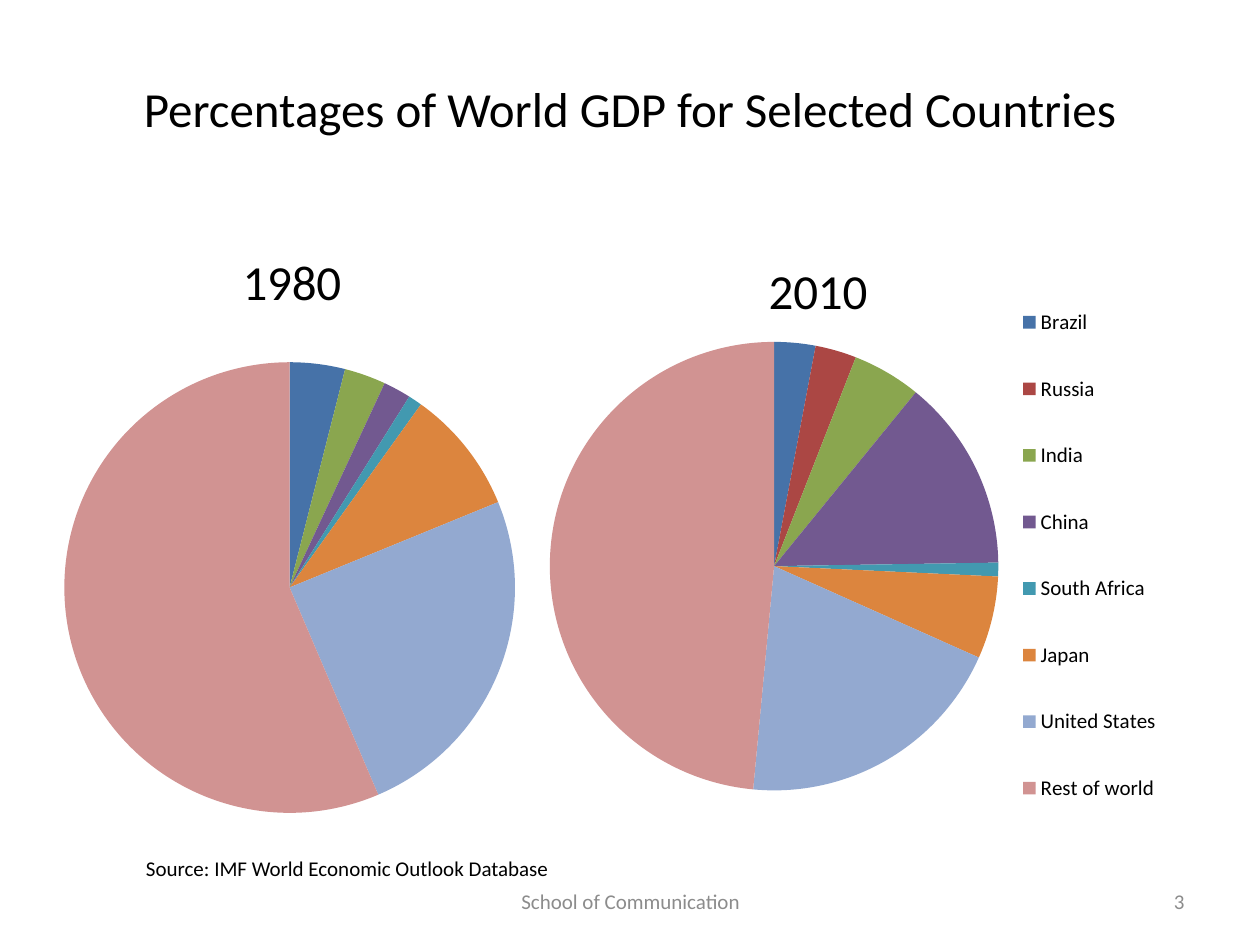
from lxml import etree
from pptx import Presentation
from pptx.chart.data import CategoryChartData as ChartData
from pptx.dml.color import RGBColor as RGB
from pptx.enum.chart import XL_CHART_TYPE as Kind, XL_LEGEND_POSITION as Side
from pptx.enum.text import MSO_ANCHOR as Anchor, PP_ALIGN as Align
from pptx.oxml.ns import qn
from pptx.util import Inches, Pt

# Content
TITLE = "Percentages of World GDP for Selected Countries"
LANDS = ["Brazil", "Russia", "India", "China", "South Africa",
         "Japan", "United States", "Rest of world"]
HUES = ["4672A8", "AB4744", "8AA64F", "725990",
        "4299B0", "DC853E", "93A9D0", "D19392"]
# Areas inside a chart are fractions of its box: left, top, width, height
PIES = [
    dict(name="1980", cats=list("12345678"), vals=[4, 0, 3, 2, 1, 9, 25, 57],
         box=(0.35, 1.7, 3.86, 5.11), head=(0.39, 0.04),
         plot=(0.04, 0.23, 0.93, 0.7), key=None),
    dict(name="2010", cats=LANDS, vals=[3, 3, 5, 14, 1, 6, 20, 49],
         box=(4.21, 1.77, 5.13, 5.12), head=(0.355, 0.04),
         plot=(0.03, 0.184, 0.694, 0.696), key=(0.75, 0.07, 0.23, 0.89)),
]
NOTES = [
    ("Source: IMF World Economic Outlook Database",
     (1.06, 6.74, 3.62, 0.3), Align.LEFT, Anchor.TOP, "000000"),
    ("School of Communication",
     (3.42, 6.95, 3.17, 0.4), Align.CENTER, Anchor.MIDDLE, "8C8C8C"),
    ("3", (7.17, 6.95, 2.33, 0.4), Align.RIGHT, Anchor.MIDDLE, "8C8C8C"),
]


def style(font, size, hue="000000"):
    font.name, font.size, font.bold = "Calibri", Pt(size), False
    font.color.rgb = RGB.from_string(hue)


def inch(box):
    return [Inches(n) for n in box]


def place(part, spot, area, inner=False):
    """Set a manual layout on a chart part, at child index spot."""
    for old in part.findall(qn("c:layout")):
        part.remove(old)
    layout = etree.Element(qn("c:layout"))
    manual = etree.SubElement(layout, qn("c:manualLayout"))
    rules = [("layoutTarget", "inner")] if inner else []
    rules += [("xMode", "edge"), ("yMode", "edge")]
    rules += zip("xywh", area)
    for tag, val in rules:
        etree.SubElement(manual, qn("c:" + tag)).set("val", str(val))
    part.insert(spot, layout)


def add_pie(slide, name, cats, vals, box, head, plot, key):
    data = ChartData()
    data.categories = cats
    data.add_series(name, vals)
    chart = slide.shapes.add_chart(Kind.PIE, *inch(box), data).chart
    style(chart.font, 18)

    # Heading
    chart.has_title = True
    chart.chart_title.include_in_layout = False
    para = chart.chart_title.text_frame.paragraphs[0]
    para.text = name
    style(para.font, 28)
    place(chart.chart_title._element, 1, head)

    # Slices
    pie = chart.plots[0]
    pie.vary_by_categories = True
    for i, hue in enumerate(HUES):
        fmt = pie.series[0].points[i].format
        fmt.fill.solid()
        fmt.fill.fore_color.rgb = RGB.from_string(hue)
        fmt.line.fill.background()
    place(chart._chartSpace.find(".//" + qn("c:plotArea")), 0, plot, True)

    # Legend
    chart.has_legend = key is not None
    if key:
        chart.legend.position = Side.RIGHT
        chart.legend.include_in_layout = False
        style(chart.legend.font, 12)
        place(chart.legend._element, 1, key)


prs = Presentation()
prs.slide_width, prs.slide_height = Inches(10), Inches(7.5)
slide = prs.slides.add_slide(prs.slide_layouts[5])

# Title
title = slide.shapes.title
title.left, title.top, title.width, title.height = inch((0.5, 0.3, 9, 1.25))
frame = title.text_frame
frame.text = TITLE
frame.vertical_anchor = Anchor.MIDDLE
frame.margin_bottom = Inches(0.19)
frame.paragraphs[0].alignment = Align.CENTER
style(frame.paragraphs[0].font, 28)

# Charts
for pie in PIES:
    add_pie(slide, **pie)

# Source and footer
for text, box, align, anchor, hue in NOTES:
    frame = slide.shapes.add_textbox(*inch(box)).text_frame
    frame.word_wrap = True
    frame.vertical_anchor = anchor
    para = frame.paragraphs[0]
    para.text, para.alignment = text, align
    style(para.font, 12, hue)

prs.save("out.pptx")
